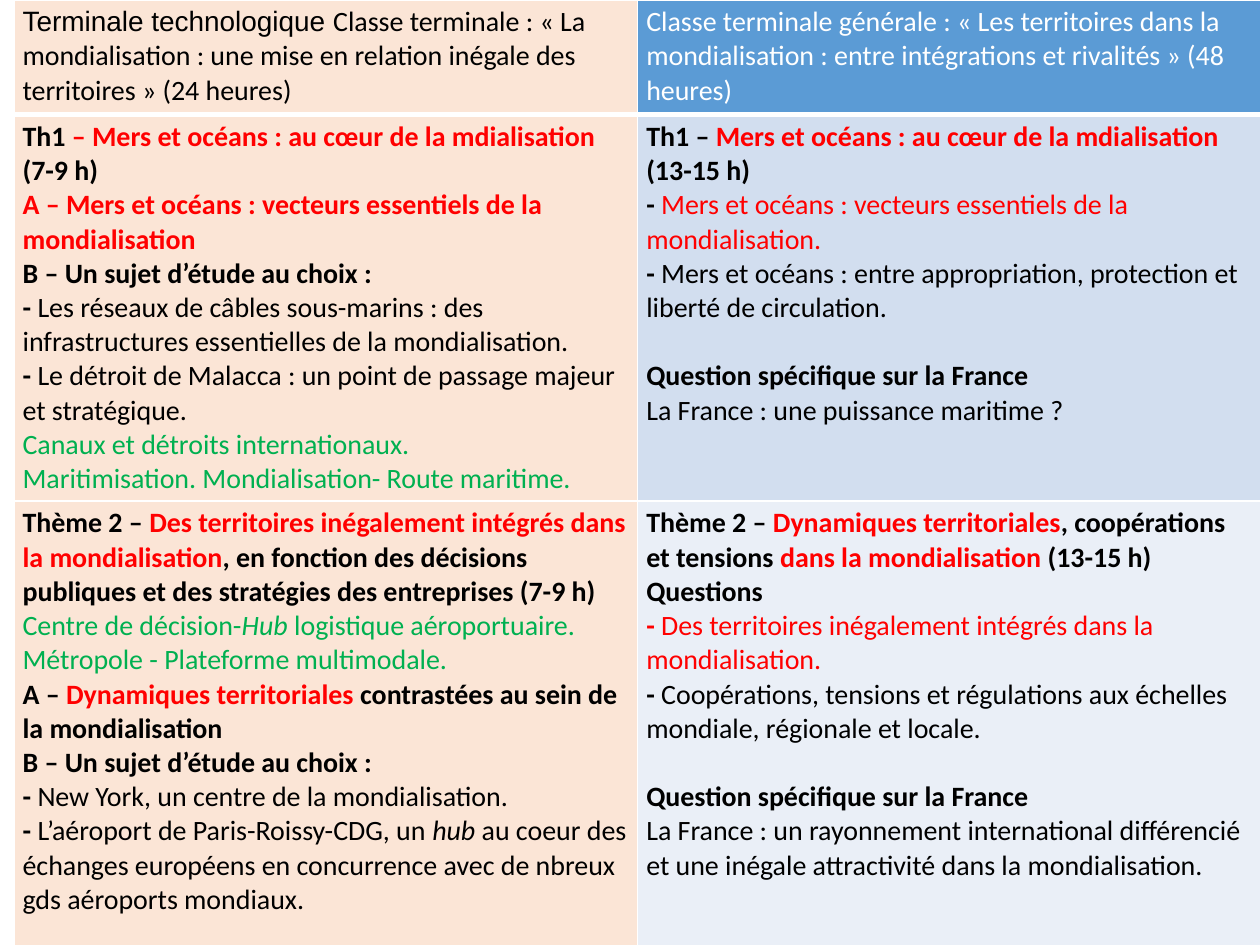
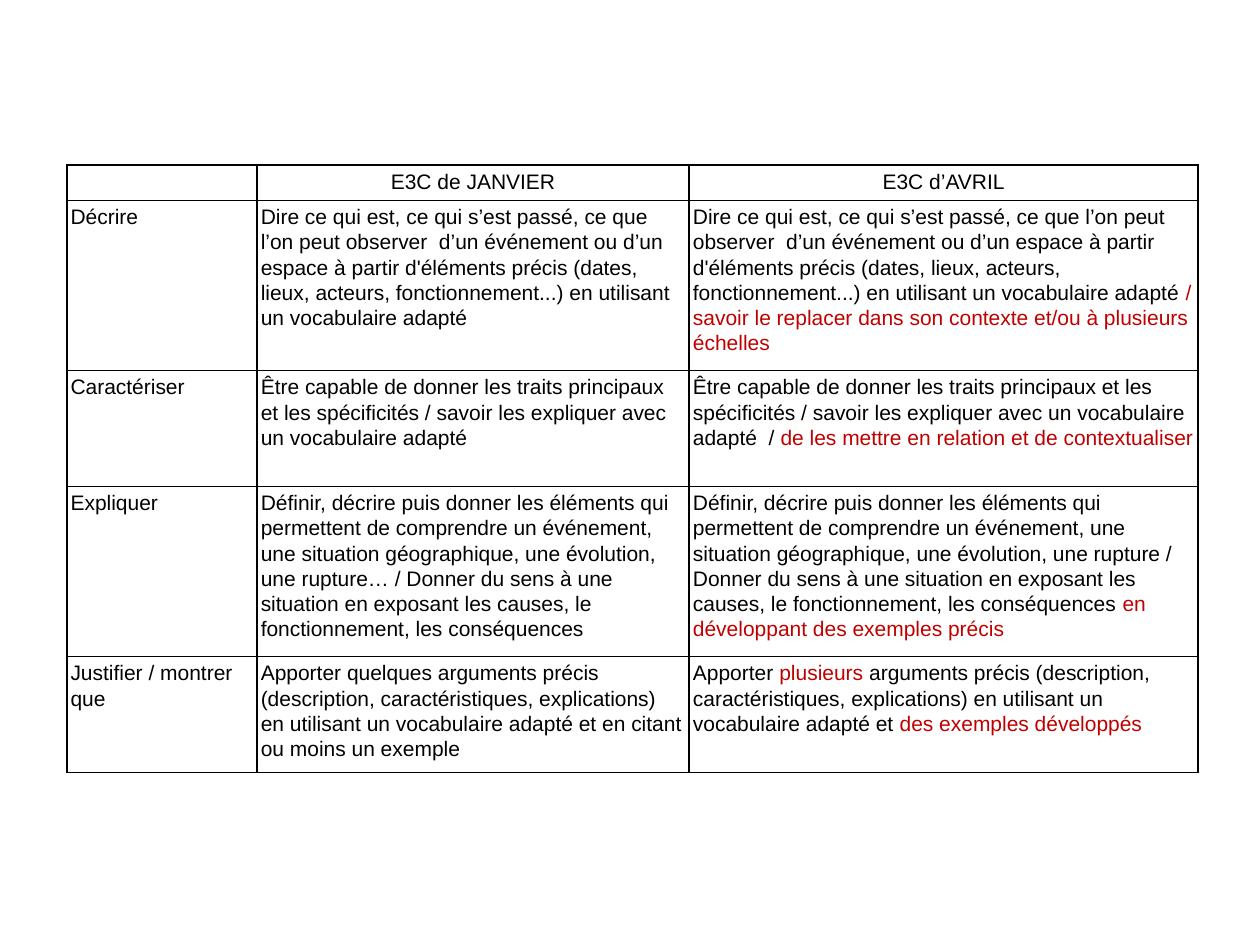
import pptx
import pptx.util
import pptx.dml.color
import pptx.enum.text
import pptx.oxml.ns
from lxml import etree

COLORS = {"k": "000000", "w": "FFFFFF", "r": "FF0000", "g": "00B050", "d": "C00000"}
PEACH, BLUE, PALE_BLUE, LIGHT_BLUE = "FBE5D6", "5B9BD5", "D2DEEF", "EAEFF7"

STUDY = [("B – Un sujet d’étude au choix :", "kb")]
FRANCE = [("Question spécifique sur la France", "kb")]
DASH = ("- ", "kb")
SEAS = "Mers et océans : au cœur de la mdialisation "
VECTORS = "Mers et océans : vecteurs essentiels de la mondialisation"

PROGRAMMES = [
    [
        [[("Terminale technologique ", "ka"),
          ("Classe terminale : « La mondialisation : une mise en relation inégale des territoires » (24 heures)", "k")]],
        [[("Classe terminale générale : « Les territoires dans la mondialisation : entre intégrations et rivalités » (48 heures)", "w")]],
    ],
    [
        [
            [("Th1 ", "kb"), ("– " + SEAS, "rb"), ("(7-9 h)", "kb")],
            [("A – " + VECTORS, "rb")],
            STUDY,
            [DASH, ("Les réseaux de câbles sous-marins : des infrastructures essentielles de la mondialisation.", "k")],
            [DASH, ("Le détroit de Malacca : un point de passage majeur et stratégique.", "k")],
            [("Canaux et détroits internationaux.", "g")],
            [("Maritimisation. Mondialisation- Route maritime.", "g")],
        ],
        [
            [("Th1 – ", "kb"), (SEAS, "rb"), ("(13-15 h)", "kb")],
            [DASH, (VECTORS + ".", "r")],
            [DASH, ("Mers et océans : entre appropriation, protection et liberté de circulation.", "k")],
            FRANCE,
            [("La France : une puissance maritime ?", "k")],
        ],
    ],
    [
        [
            [("Thème 2 – ", "kb"), ("Des territoires inégalement intégrés dans la mondialisation", "rb"),
             (", en fonction des décisions publiques et des stratégies des entreprises (7-9 h)", "kb")],
            [("Centre de décision-", "g"), ("Hub ", "gi"), ("logistique aéroportuaire.", "g")],
            [("Métropole - Plateforme multimodale.", "g")],
            [("A – ", "kb"), ("Dynamiques territoriales ", "rb"), ("contrastées au sein de la mondialisation", "kb")],
            STUDY,
            [DASH, ("New York, un centre de la mondialisation.", "k")],
            [DASH, ("L’aéroport de Paris-Roissy-CDG, un ", "k"), ("hub ", "ki"),
             ("au coeur des échanges européens en concurrence avec de nbreux gds aéroports mondiaux.", "k")],
        ],
        [
            [("Thème 2 – ", "kb"), ("Dynamiques territoriales", "rb"), (", coopérations et tensions ", "kb"),
             ("dans la mondialisation ", "rb"), ("(13-15 h)", "kb")],
            [("Questions", "kb")],
            [("- ", "rb"), ("Des territoires inégalement intégrés dans la mondialisation.", "r")],
            [DASH, ("Coopérations, tensions et régulations aux échelles mondiale, régionale et locale.", "k")],
            FRANCE,
            [("La France : un rayonnement international différencié et une inégale attractivité dans la mondialisation.", "k")],
        ],
    ],
]
PROGRAMME_FILLS = [(PEACH, BLUE), (PEACH, PALE_BLUE), (PEACH, LIGHT_BLUE)]

DESCRIBE = ("Dire ce qui est, ce qui s’est passé, ce que l’on peut observer  d’un événement ou d’un espace "
            "à partir d'éléments précis (dates, lieux, acteurs, fonctionnement...) en utilisant un vocabulaire adapté")
CHARACTERISE = ("Être capable de donner les traits principaux et les spécificités / "
                "savoir les expliquer avec un vocabulaire adapté")
EXPLAIN = ("Définir, décrire puis donner les éléments qui permettent de comprendre un événement, "
           "une situation géographique, une évolution, une rupture{} / Donner du sens à une situation "
           "en exposant les causes, le fonctionnement, les conséquences")
ARGUE = " arguments précis (description, caractéristiques, explications) en utilisant un vocabulaire adapté et "

SKILLS = [
    ([], [("E3C de JANVIER", "k")], [("E3C d’AVRIL", "k")]),
    ([("Décrire", "k")], [(DESCRIBE, "k")],
     [(DESCRIBE + " ", "k"), ("/ savoir le replacer dans son contexte et/ou à plusieurs échelles", "d")]),
    ([("Caractériser", "k")], [(CHARACTERISE, "k")],
     [(CHARACTERISE + "  / ", "k"), ("de les mettre en relation et de contextualiser", "d")]),
    ([("Expliquer", "k")], [(EXPLAIN.format("…"), "k")],
     [(EXPLAIN.format("") + " ", "k"), ("en développant des exemples précis", "d")]),
    ([("Justifier / montrer que", "k")], [("Apporter quelques" + ARGUE + "en citant ou moins un exemple", "k")],
     [("Apporter ", "k"), ("plusieurs", "d"), (ARGUE, "k"), ("des exemples développés", "d")]),
]


def rgb(value):
    return pptx.dml.color.RGBColor.from_string(value)


def add_text(p, text, *, style="k", font="Arial", size=12):
    r = p.add_run()
    r.text = text
    r.font.name = "Arial" if "a" in style else font
    r.font.size = pptx.util.Pt(size)
    r.font.bold = "b" in style
    r.font.italic = "i" in style
    r.font.color.rgb = rgb(COLORS[style[0]])


def sub(parent, tag, **attrs):
    return etree.SubElement(parent, pptx.oxml.ns.qn(tag), **attrs)


def format_cell(cell, *, margins, border, widths, fill=None):
    cell.margin_left = cell.margin_right = pptx.util.Inches(margins[0])
    cell.margin_top = cell.margin_bottom = pptx.util.Inches(margins[1])
    tc_pr = cell._tc.get_or_add_tcPr()
    for side, width in zip("LRTB", widths):
        ln = sub(tc_pr, "a:ln" + side, w=str(pptx.util.Pt(width)))
        sub(sub(ln, "a:solidFill"), "a:srgbClr", val=border)
    if fill:
        cell.fill.solid()
        cell.fill.fore_color.rgb = rgb(fill)
    else:
        cell.fill.background()


def add_table(s, left, top, cols, rows):
    frame = s.shapes.add_table(len(rows), len(cols), *map(pptx.util.Inches, (left, top, sum(cols), sum(rows))))
    table = frame.table
    table.first_row = table.horz_banding = False
    for column, width in zip(table.columns, cols):
        column.width = pptx.util.Inches(width)
    for row, height in zip(table.rows, rows):
        row.height = pptx.util.Inches(height)
    return table


def build_programmes(s):
    table = add_table(s, 0.11, 0, [4.95] * 2, [0.91, 3.03, 3.56])
    for i, (row, fills) in enumerate(zip(PROGRAMMES, PROGRAMME_FILLS)):
        for j, (paragraphs, fill) in enumerate(zip(row, fills)):
            cell = table.cell(i, j)
            widths = (1, 1, 3 if i == 1 else 1, 3 if i == 0 else 1)
            format_cell(cell, margins=(0.07, 0.04), border="FFFFFF", widths=widths, fill=fill)
            tf = cell.text_frame
            for n, runs in enumerate(paragraphs):
                p = tf.add_paragraph() if n else tf.paragraphs[0]
                if runs is FRANCE:
                    p.space_before = pptx.util.Pt(19.5)
                for text, style in runs:
                    add_text(p, text, style=style, font="Calibri", size=16)


def build_skills(s):
    table = add_table(s, 0.53, 1.31, [1.51, 3.43, 4.04], [0.28, 1.35, 0.92, 1.35, 0.92])
    for i, row in enumerate(SKILLS):
        for j, runs in enumerate(row):
            cell = table.cell(i, j)
            format_cell(cell, margins=(0.03, 0.03), border="000000", widths=[1] * 4)
            p = cell.text_frame.paragraphs[0]
            p.line_spacing = 1.07
            if i == 0:
                p.alignment = pptx.enum.text.PP_ALIGN.CENTER
            for text, style in runs:
                add_text(p, text, style=style)
            if not runs:
                sub(p._p, "a:endParaRPr", sz="1200")


def main():
    prs = pptx.Presentation()
    prs.slide_width = pptx.util.Inches(10)
    prs.slide_height = pptx.util.Inches(7.5)
    for build in (build_programmes, build_skills):
        build(prs.slides.add_slide(prs.slide_layouts[6]))
    prs.save("out.pptx")


if __name__ == "__main__":
    main()
